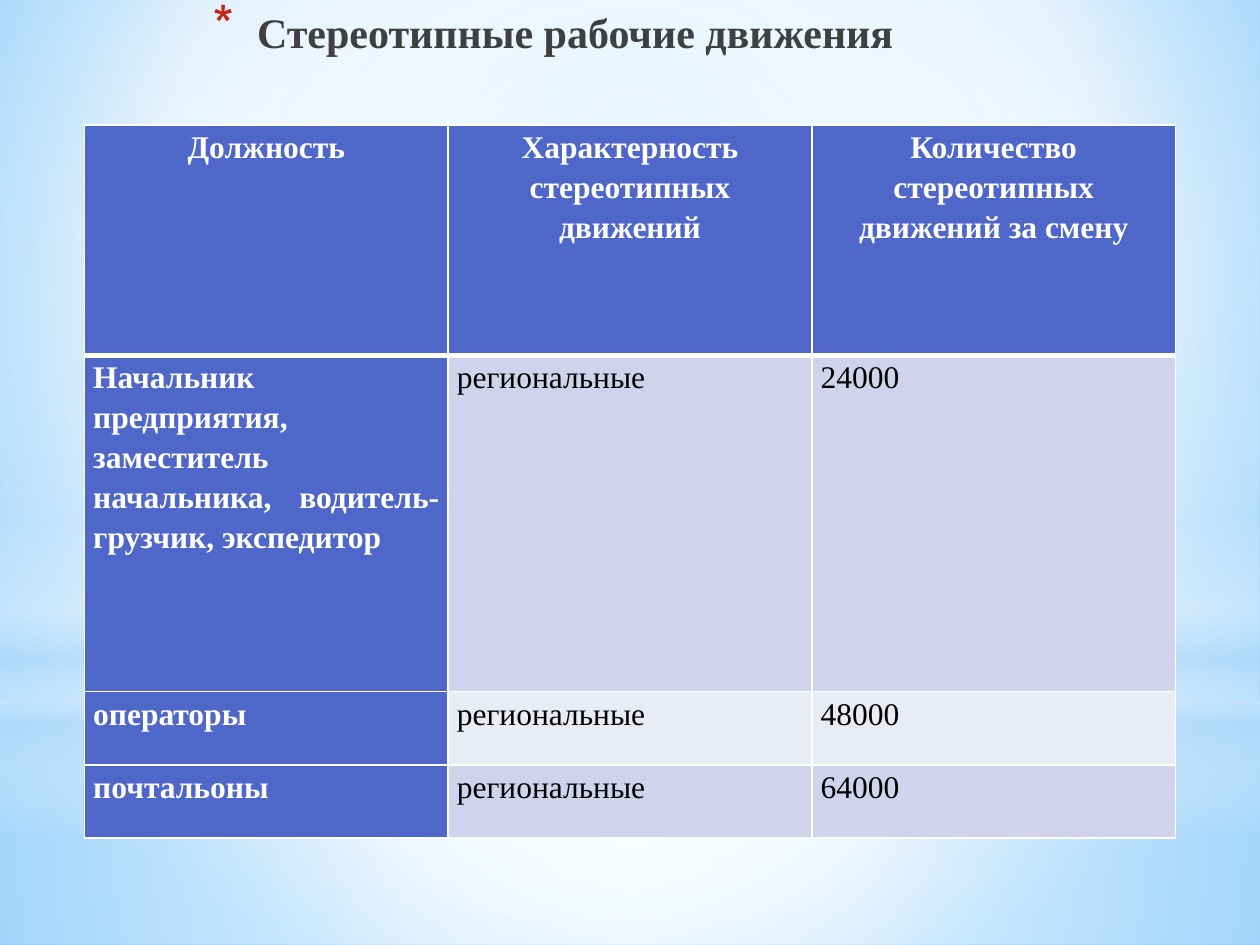
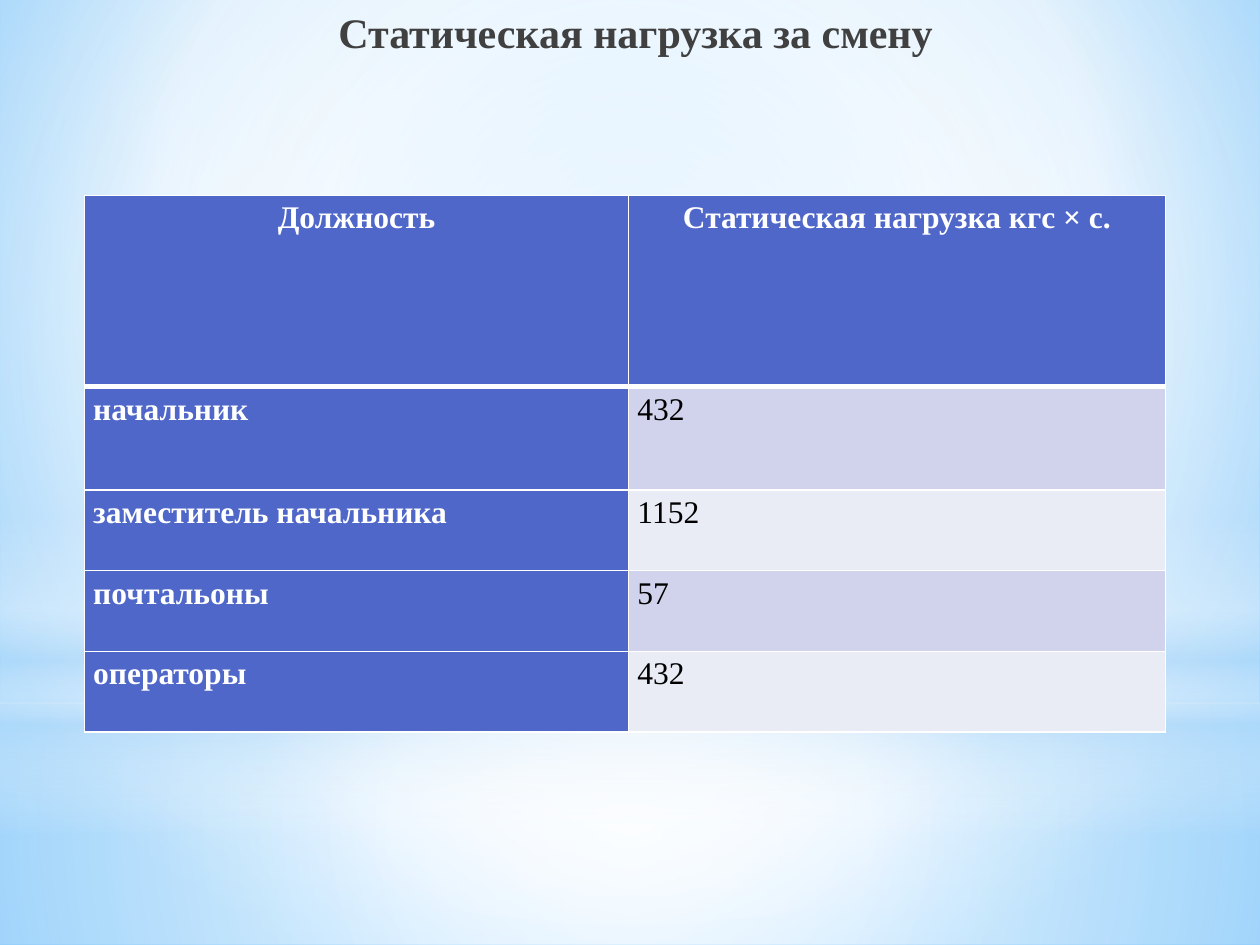
from dataclasses import dataclass

from pptx import Presentation
from pptx import util as u
from pptx.dml.color import RGBColor
from pptx.enum import shapes, text
from pptx.oxml import parse_xml
from pptx.oxml.ns import nsdecls, qn


@dataclass(frozen=True)
class Theme:
    font: str = "Times New Roman"
    title_size: int = 24
    cell_size: int = 18
    line_spacing: float = 1.15
    title: str = "404040"
    bullet: str = "C3260C"
    accent: str = "4E67C8"
    bands: tuple = ("D0D3EB", "E9EBF5")
    white: str = "FFFFFF"
    black: str = "000000"
    mist: str = "B4DCFA"
    sky: str = "9ED5FF"
    deep_sky: str = "5BB9FF"


CENTRE = (50, 50, 50, 50)


class Deck:
    def __init__(self, theme):
        self.theme = theme
        self.presentation = Presentation()
        self.presentation.slide_width = u.Inches(10)
        self.presentation.slide_height = u.Inches(7.5)
        self.slide = None
        master = self.presentation.slide_master
        self.apply_gradient(
            master.background.fill,
            master.element,
            [(0, theme.sky, 100), (60, theme.white, 100), (100, theme.deep_sky, 100)],
            (20, 10, 20, 60),
        )

    def add_slide(self):
        layout = self.presentation.slide_layouts.get_by_name("Title Only")
        self.slide = self.presentation.slides.add_slide(layout)
        self.add_backdrop()

    def apply_gradient(self, fill, element, stops, focus=None):
        fill.solid()
        stop_xml = "".join(
            f'<a:gs pos="{position * 1000}"><a:srgbClr val="{color}">'
            f'<a:alpha val="{alpha * 1000}"/></a:srgbClr></a:gs>'
            for position, color, alpha in stops
        )
        direction = '<a:lin ang="5400000" scaled="0"/>'
        if focus:
            left, top, right, bottom = (side * 1000 for side in focus)
            direction = (
                f'<a:path path="circle"><a:fillToRect l="{left}" t="{top}" '
                f'r="{right}" b="{bottom}"/></a:path>'
            )
        gradient = parse_xml(
            f'<a:gradFill {nsdecls("a")} rotWithShape="1">'
            f"<a:gsLst>{stop_xml}</a:gsLst>{direction}</a:gradFill>"
        )
        solid = next(element.iter(qn("a:solidFill")))
        solid.getparent().replace(solid, gradient)

    def add_backdrop(self):
        white, mist = self.theme.white, self.theme.mist
        rectangle, oval = shapes.MSO_SHAPE.RECTANGLE, shapes.MSO_SHAPE.OVAL
        layers = [
            (rectangle, 5.58, 1.92,
             [(0, white, 91), (37, white, 76), (100, mist, 79)], CENTRE),
            (rectangle, 0, 5.58,
             [(0, white, 89), (48, white, 62), (100, mist, 79)], CENTRE),
            (rectangle, 4.12, 2.5,
             [(0, white, 1), (29, white, 30), (45, mist, 40),
              (55, white, 26), (65, mist, 60), (100, white, 1)], None),
            (oval, 1.75, 5.58,
             [(0, white, 100), (56, white, 1), (100, white, 1)], CENTRE),
        ]
        title = self.slide.shapes.title
        for kind, top, height, stops, focus in layers:
            shape = self.slide.shapes.add_shape(
                kind, 0, u.Inches(top), u.Inches(10), u.Inches(height)
            )
            shape.shadow.inherit = False
            shape.line.fill.background()
            self.apply_gradient(shape.fill, shape.element, stops, focus)
            title.element.addprevious(shape.element)

    def format_paragraph(self, paragraph, size, color, bold, alignment):
        paragraph.alignment = alignment
        for run in paragraph.runs:
            run.font.name = self.theme.font
            run.font.size = u.Pt(size)
            run.font.bold = bold
            run.font.color.rgb = RGBColor.from_string(color)

    def add_title(self, wording, width, bulleted=False):
        title = self.slide.shapes.title
        title.left, title.top = u.Inches(0.83), u.Inches(0)
        title.width, title.height = u.Inches(width), u.Inches(1.25)
        frame = title.text_frame
        frame.text = wording
        frame.word_wrap = True
        frame.auto_size = text.MSO_AUTO_SIZE.NONE
        frame.vertical_anchor = text.MSO_ANCHOR.TOP
        frame.margin_top = u.Inches(0.05)
        paragraph = frame.paragraphs[0]
        self.format_paragraph(
            paragraph, self.theme.title_size, self.theme.title, True, text.PP_ALIGN.CENTER
        )
        if bulleted:
            self.add_bullet(paragraph)

    def add_bullet(self, paragraph):
        properties = paragraph._p.get_or_add_pPr()
        indent = u.Inches(0.35)
        properties.set("marL", str(indent))
        properties.set("indent", str(-indent))
        for markup in (
            f'<a:buClr {nsdecls("a")}><a:srgbClr val="{self.theme.bullet}"/></a:buClr>',
            f'<a:buSzPct {nsdecls("a")} val="128000"/>',
            f'<a:buChar {nsdecls("a")} char="*"/>',
        ):
            properties.append(parse_xml(markup))

    def add_borders(self, cell, top, bottom):
        properties = cell._tc.get_or_add_tcPr()
        widths = {"lnL": 1, "lnR": 1, "lnT": top, "lnB": bottom}
        for index, (side, width) in enumerate(widths.items()):
            border = parse_xml(
                f'<a:{side} {nsdecls("a")} w="{u.Pt(width)}"><a:solidFill>'
                f'<a:srgbClr val="{self.theme.white}"/></a:solidFill></a:{side}>'
            )
            properties.insert(index, border)

    def format_cell(self, cell, wording, row, column):
        theme = self.theme
        heading = row == 0 or column == 0
        fill = theme.accent if heading else theme.bands[(row - 1) % 2]
        cell.text = wording
        cell.margin_left = cell.margin_right = u.Inches(0.07)
        cell.margin_top = cell.margin_bottom = 0
        cell.fill.solid()
        cell.fill.fore_color.rgb = RGBColor.from_string(fill)
        paragraph = cell.text_frame.paragraphs[0]
        paragraph.line_spacing = theme.line_spacing
        self.format_paragraph(
            paragraph,
            theme.cell_size,
            theme.white if heading else theme.black,
            heading,
            text.PP_ALIGN.CENTER if row == 0 else text.PP_ALIGN.JUSTIFY,
        )
        self.add_borders(cell, 3 if row == 1 else 1, 3 if row == 0 else 1)

    def add_table(self, top, widths, heights, rows):
        table = self.slide.shapes.add_table(
            len(heights), len(widths), u.Inches(0.67), u.Inches(top),
            u.Inches(sum(widths)), u.Inches(sum(heights)),
        ).table
        for column, width in zip(table.columns, widths):
            column.width = u.Inches(width)
        for row, height in zip(table.rows, heights):
            row.height = u.Inches(height)
        for row_index, row in enumerate(rows):
            for column_index, wording in enumerate(row):
                cell = table.cell(row_index, column_index)
                self.format_cell(cell, wording, row_index, column_index)


def main():
    deck = Deck(Theme())

    deck.add_slide()
    deck.add_title("Стереотипные рабочие движения", 7.12, bulleted=True)
    deck.add_table(
        0.99, [8.66 / 3] * 3, [1.83, 2.67, 0.58, 0.58],
        [
            ("Должность", "Характерность стереотипных движений",
             "Количество стереотипных движений за смену"),
            ("Начальник предприятия, заместитель начальника, "
             "водитель-грузчик, экспедитор", "региональные", "24000"),
            ("операторы", "региональные", "48000"),
            ("почтальоны", "региональные", "64000"),
        ],
    )

    deck.add_slide()
    deck.add_title("Статическая нагрузка за смену", 8.43)
    deck.add_table(
        1.55, [4.32, 4.26], [1.52, 0.82] + [0.64] * 3,
        [
            ("Должность", "Статическая нагрузка кгс × с."),
            ("начальник", "432"),
            ("заместитель начальника", "1152"),
            ("почтальоны", "57"),
            ("операторы", "432"),
        ],
    )

    deck.presentation.save("out.pptx")


if __name__ == "__main__":
    main()
